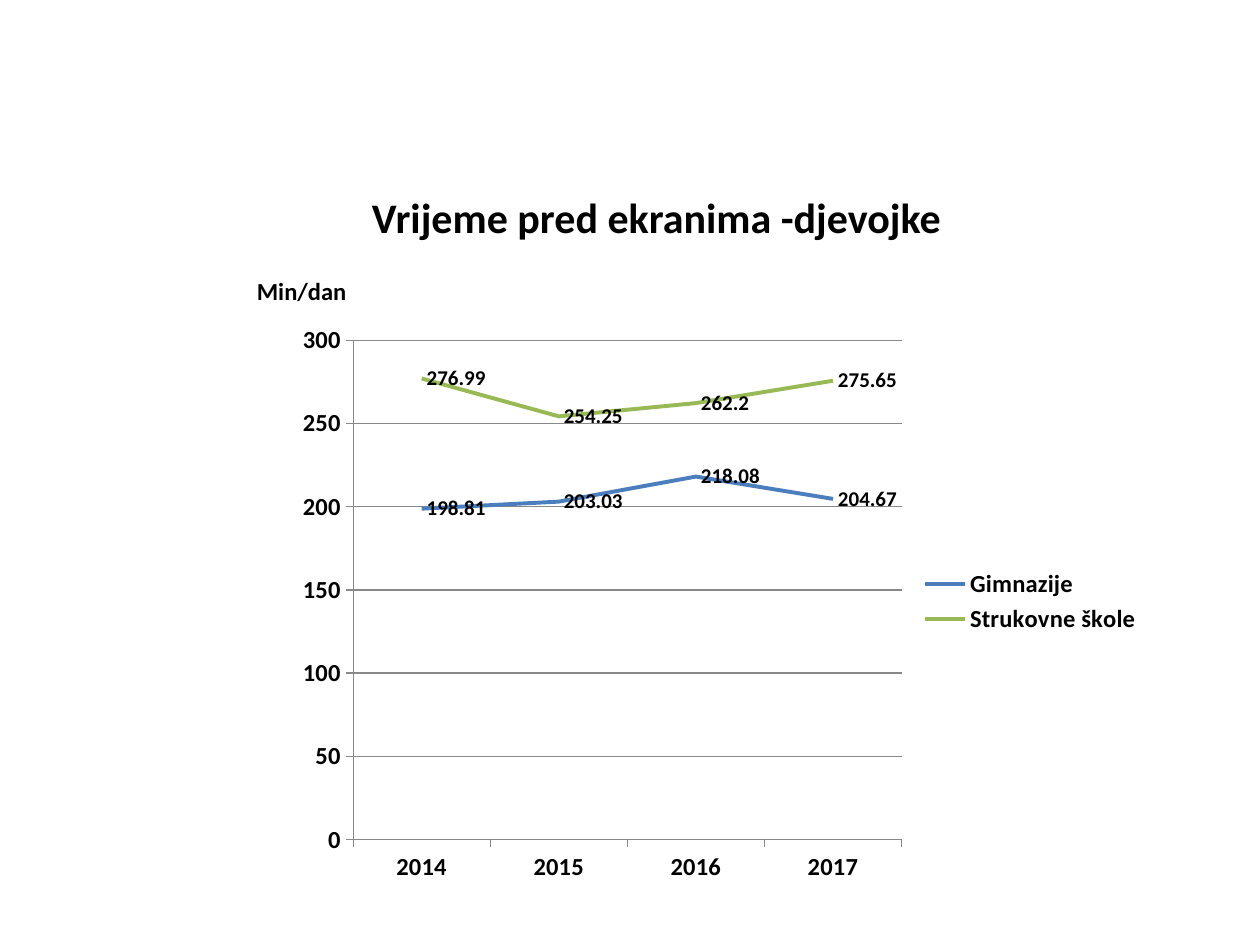
from lxml import etree
from pptx import Presentation
from pptx import util as u
from pptx.chart.data import CategoryChartData
from pptx.dml.color import RGBColor
from pptx.enum import chart as charts, text
from pptx.oxml.ns import qn

FONT = "Calibri"
COLORS = {"text": "000000", "grid": "888888",
          "Gimnazije": "4B7EBC", "Strukovne škole": "98B955"}
YEARS = ["2014", "2015", "2016", "2017"]
MINUTES = {
    "Gimnazije": [198.81, 203.03, 218.08, 204.67],
    "Strukovne škole": [276.99, 254.25, 262.2, 275.65],
}


def style_font(font, size, bold=True):
    font.name = FONT
    font.size = u.Pt(size)
    font.bold = bold
    font.color.rgb = RGBColor.from_string(COLORS["text"])


def style_line(line, color, width):
    line.color.rgb = RGBColor.from_string(COLORS[color])
    line.width = u.Pt(width)


def add_label(slide, box, wording, size, alignment):
    shape = slide.shapes.add_textbox(*map(u.Inches, box))
    frame = shape.text_frame
    frame.word_wrap = True
    frame.auto_size = text.MSO_AUTO_SIZE.SHAPE_TO_FIT_TEXT
    paragraph = frame.paragraphs[0]
    paragraph.text = wording
    paragraph.alignment = alignment
    style_font(paragraph.font, size)


def place_plot(chart, x, y, w, h):
    """Fix the inner plot area, in fractions of the chart."""
    plot_area = chart._chartSpace.chart.plotArea
    for old in plot_area.findall(qn("c:layout")):
        plot_area.remove(old)
    layout = etree.Element(qn("c:layout"))
    manual = etree.SubElement(layout, qn("c:manualLayout"))
    settings = {"layoutTarget": "inner", "xMode": "edge", "yMode": "edge",
                "x": x, "y": y, "w": w, "h": h}
    for name, value in settings.items():
        etree.SubElement(manual, qn(f"c:{name}"), val=str(value))
    plot_area.insert(0, layout)


def add_screen_time_chart(slide, box):
    data = CategoryChartData()
    data.categories = YEARS
    for name, values in MINUTES.items():
        data.add_series(name, values)
    chart = slide.shapes.add_chart(
        charts.XL_CHART_TYPE.LINE, *map(u.Inches, box), data).chart
    chart.has_title = False
    style_font(chart.font, 10, bold=False)
    place_plot(chart, 0.08, 0.05, 0.63, 0.86)

    chart.has_legend = True
    chart.legend.position = charts.XL_LEGEND_POSITION.RIGHT
    chart.legend.include_in_layout = False
    style_font(chart.legend.font, 14)

    for axis in (chart.category_axis, chart.value_axis):
        axis.major_tick_mark = charts.XL_TICK_MARK.OUTSIDE
        axis.minor_tick_mark = charts.XL_TICK_MARK.NONE
        style_font(axis.tick_labels.font, 14)
        style_line(axis.format.line, "grid", 0.75)
    chart.value_axis.minimum_scale = 0
    chart.value_axis.maximum_scale = 300
    chart.value_axis.major_unit = 50
    style_line(chart.value_axis.major_gridlines.format.line, "grid", 0.75)

    chart.plots[0].vary_by_categories = False
    for series in chart.plots[0].series:
        series.smooth = False
        series.marker.style = charts.XL_MARKER_STYLE.NONE
        style_line(series.format.line, series.name, 2.25)
        labels = series.data_labels
        labels.show_value = True
        labels.position = charts.XL_LABEL_POSITION.RIGHT
        style_font(labels.font, 12)


def main():
    presentation = Presentation()
    presentation.slide_width = u.Inches(10)
    presentation.slide_height = u.Inches(7.5)
    slide = presentation.slides.add_slide(presentation.slide_layouts[6])
    add_label(slide, (1, 1.47, 8.42, 0.5), "Vrijeme pred ekranima -djevojke",
              24, text.PP_ALIGN.CENTER)
    add_label(slide, (1.94, 2.14, 1, 0.34), "Min/dan", 14, text.PP_ALIGN.LEFT)
    add_screen_time_chart(slide, (2.25, 2.47, 6.91, 4.61))
    presentation.save("out.pptx")


if __name__ == "__main__":
    main()
